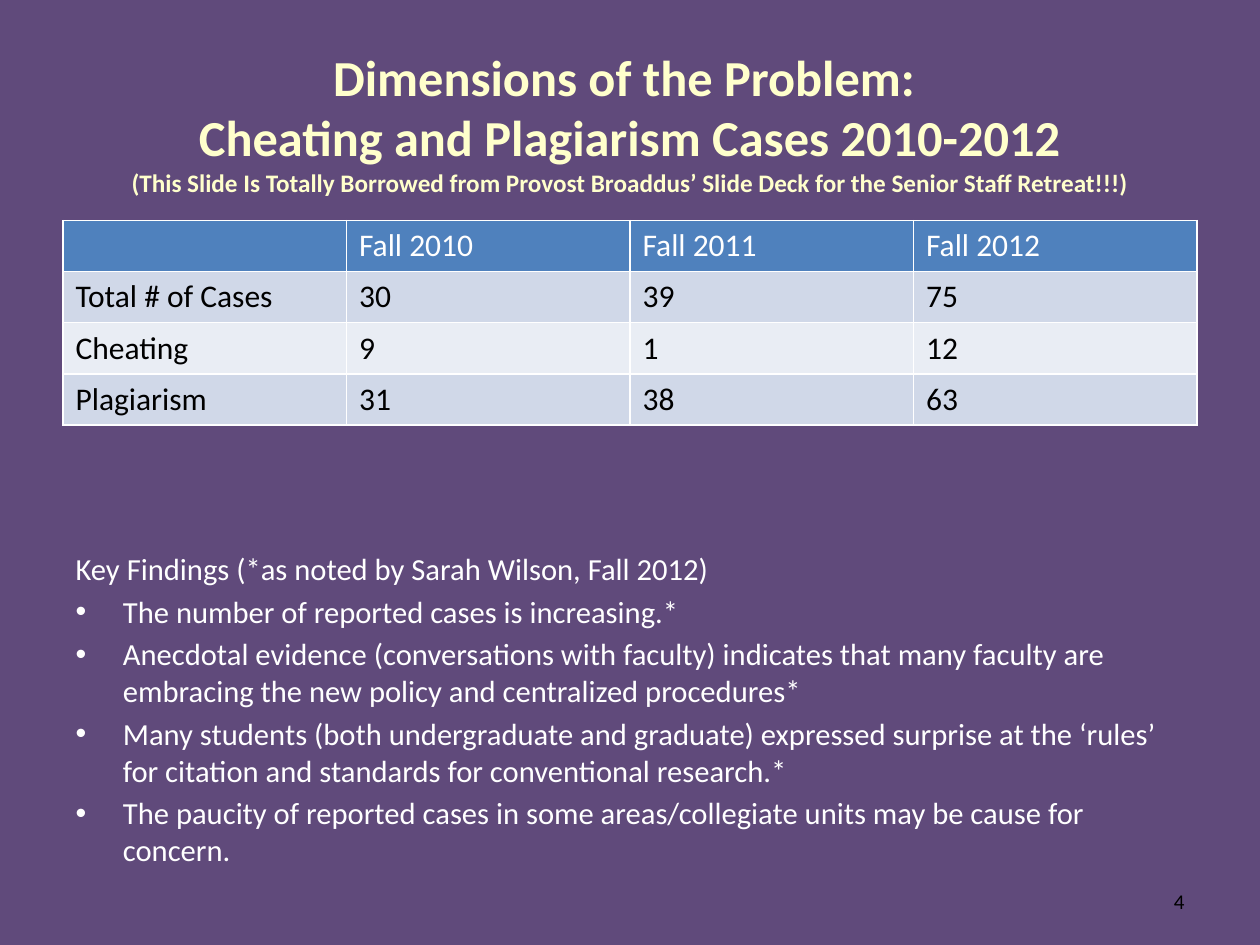
from copy import deepcopy
from dataclasses import dataclass

from lxml import etree
from pptx import Presentation
from pptx.dml.color import RGBColor
from pptx.enum.text import MSO_ANCHOR, MSO_AUTO_SIZE, PP_ALIGN
from pptx.oxml.ns import qn
from pptx.util import Pt

CENTER = PP_ALIGN.CENTER
RIGHT = PP_ALIGN.RIGHT
MIDDLE = MSO_ANCHOR.MIDDLE
NO_AUTOFIT = MSO_AUTO_SIZE.NONE


@dataclass(frozen=True)
class Theme:
    font: str = "Calibri"
    background: str = "604A7B"
    title: str = "FFFFCC"
    light: str = "FFFFFF"
    dark: str = "000000"
    header_fill: str = "4F81BD"
    band_fills: tuple[str, str] = ("D0D8E8", "E9EDF4")
    title_size: float = 28.8
    subtitle_size: float = 14.4
    table_size: float = 18
    body_size: float = 17.5
    number_size: float = 12


@dataclass(frozen=True)
class Box:
    left: float
    top: float
    width: float
    height: float

    def lengths(self) -> tuple:
        return Pt(self.left), Pt(self.top), Pt(self.width), Pt(self.height)


@dataclass(frozen=True)
class CaseRow:
    label: str
    counts: tuple[str, ...]


THEME = Theme()
TITLE_BOX = Box(36, 24.5, 648, 90)
TABLE_BOX = Box(36, 126, 648, 116.8)
FINDINGS_BOX = Box(36, 310.5, 648, 172)
NUMBER_BOX = Box(516, 500.5, 168, 28.75)

TITLE_LINES = (
    "Dimensions of the Problem: ",
    "Cheating and Plagiarism Cases 2010-2012",
    "(This Slide Is Totally Borrowed from Provost Broaddus’ Slide Deck for the Senior Staff Retreat!!!)",
)
CASE_ROWS = (
    CaseRow("", ("Fall 2010", "Fall 2011", "Fall 2012")),
    CaseRow("Total # of Cases", ("30", "39", "75")),
    CaseRow("Cheating", ("9", "1", "12")),
    CaseRow("Plagiarism", ("31", "38", "63")),
)
FINDINGS = (
    "Key Findings (*as noted by Sarah Wilson, Fall 2012)",
    "The number of reported cases is increasing.*",
    "Anecdotal evidence (conversations with faculty) indicates that many faculty are "
    "embracing the new policy and centralized procedures*",
    "Many students (both undergraduate and graduate) expressed surprise at the ‘rules’ "
    "for citation and standards for conventional research.*",
    "The paucity of reported cases in some areas/collegiate units may be cause for concern.",
)


def place(shape, box: Box) -> None:
    shape.left, shape.top, shape.width, shape.height = box.lengths()


def format_runs(paragraph, size: float, color: str, bold: bool = False) -> None:
    for run in paragraph.runs:
        run.font.name = THEME.font
        run.font.size = Pt(size)
        run.font.bold = bold
        run.font.color.rgb = RGBColor.from_string(color)


def fill_solid(fill, color: str) -> None:
    fill.solid()
    fill.fore_color.rgb = RGBColor.from_string(color)


def draw_title(shape) -> None:
    place(shape, TITLE_BOX)
    frame = shape.text_frame
    frame.auto_size = NO_AUTOFIT
    frame.vertical_anchor = MIDDLE
    paragraph = frame.paragraphs[0]
    paragraph.text = "\v".join(TITLE_LINES)
    paragraph.alignment = CENTER
    format_runs(paragraph, THEME.title_size, THEME.title, bold=True)
    for line_break in paragraph._p.findall(qn("a:br")):
        line_break.append(deepcopy(paragraph.runs[0].font._element))
    paragraph.runs[-1].font.size = Pt(THEME.subtitle_size)


def draw_table(slide, rows: tuple[CaseRow, ...]) -> None:
    column_count = len(rows[0].counts) + 1
    table = slide.shapes.add_table(len(rows), column_count, *TABLE_BOX.lengths()).table
    for row_index, row in enumerate(rows):
        is_header = row_index == 0
        fill = THEME.header_fill if is_header else THEME.band_fills[(row_index - 1) % 2]
        color = THEME.light if is_header else THEME.dark
        for column_index, text in enumerate((row.label, *row.counts)):
            cell = table.cell(row_index, column_index)
            fill_solid(cell.fill, fill)
            if text:
                cell.text_frame.text = text
                format_runs(cell.text_frame.paragraphs[0], THEME.table_size, color)


def draw_findings(shape) -> None:
    place(shape, FINDINGS_BOX)
    frame = shape.text_frame
    frame.auto_size = NO_AUTOFIT
    frame.text = "\n".join(FINDINGS)
    for paragraph in frame.paragraphs:
        format_runs(paragraph, THEME.body_size, THEME.light)
    heading_properties = frame.paragraphs[0]._p.get_or_add_pPr()
    etree.SubElement(heading_properties, qn("a:buNone"))


def draw_slide_number(slide, number: str) -> None:
    frame = slide.shapes.add_textbox(*NUMBER_BOX.lengths()).text_frame
    frame.word_wrap = True
    frame.vertical_anchor = MIDDLE
    frame.text = number
    paragraph = frame.paragraphs[0]
    paragraph.alignment = RIGHT
    format_runs(paragraph, THEME.number_size, THEME.dark)


def main() -> None:
    presentation = Presentation()
    presentation.slide_width, presentation.slide_height = Pt(720), Pt(540)
    slide = presentation.slides.add_slide(presentation.slide_layouts[1])
    fill_solid(slide.background.fill, THEME.background)
    draw_title(slide.shapes.title)
    draw_table(slide, CASE_ROWS)
    draw_findings(slide.placeholders[1])
    draw_slide_number(slide, "4")
    presentation.save("out.pptx")


if __name__ == "__main__":
    main()
